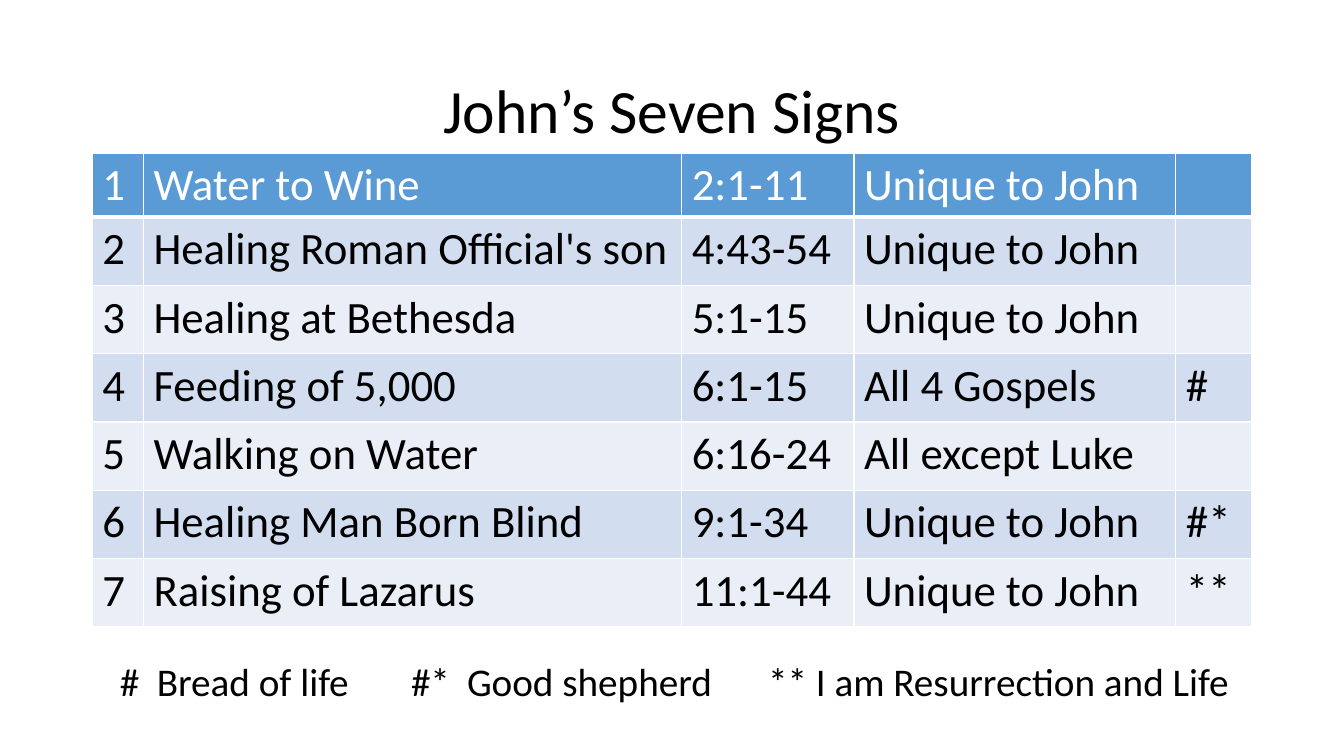
import pptx
import pptx.util
import pptx.dml.color
import pptx.enum.text
import pptx.oxml
import pptx.oxml.ns

Pt = pptx.util.Pt
NS = pptx.oxml.ns.nsdecls("a")


def color(code):
    return pptx.dml.color.RGBColor.from_string(code)


def style(par, size, code):
    """Set the font of a whole paragraph."""
    par.font.name = "Calibri"
    par.font.size = Pt(size)
    par.font.bold = False
    par.font.color.rgb = color(code)


deck = pptx.Presentation()
deck.slide_width, deck.slide_height = Pt(960), Pt(540)
slide = deck.slides.add_slide(deck.slide_layouts[6])

# Title
title = slide.shapes.add_textbox(Pt(66), Pt(28.8), Pt(828), Pt(104.4))
frame = title.text_frame
frame.word_wrap = True
frame.vertical_anchor = pptx.enum.text.MSO_ANCHOR.MIDDLE
par = frame.paragraphs[0]
par.text = "John’s Seven Signs"
par.alignment = pptx.enum.text.PP_ALIGN.CENTER
par.line_spacing = 0.9
style(par, 44, "000000")

# Table of signs
signs = [
    ("Water to Wine", "2:1-11", "Unique to John", ""),
    ("Healing Roman Official's son", "4:43-54", "Unique to John", ""),
    ("Healing at Bethesda", "5:1-15", "Unique to John", ""),
    ("Feeding of 5,000", "6:1-15", "All 4 Gospels", "#"),
    ("Walking on Water", "6:16-24", "All except Luke", ""),
    ("Healing Man Born Blind", "9:1-34", "Unique to John", "#*"),
    ("Raising of Lazarus", "11:1-44", "Unique to John", "**"),
]
widths = [36.5, 384.5, 123, 230, 54]
heights = [33] + [48.8] * 6
table = slide.shapes.add_table(len(signs), len(widths), Pt(66), Pt(109.4),
                               Pt(sum(widths)), Pt(sum(heights))).table
for col, width in zip(table.columns, widths):
    col.width = Pt(width)
for row, height in zip(table.rows, heights):
    row.height = Pt(height)

for i, sign in enumerate(signs):
    head = i == 0
    fill = "5B9BD5" if head else ("EAEFF7", "D2DEEF")[i % 2]
    for j, text in enumerate((str(i + 1), *sign)):
        cell = table.cell(i, j)
        par = cell.text_frame.paragraphs[0]
        par.text = text
        style(par, 32, "FFFFFF" if head else "000000")
        cell.fill.solid()
        cell.fill.fore_color.rgb = color(fill)
        # Borders come before the fill in the cell properties
        props = cell._tc.get_or_add_tcPr()
        for k, side in enumerate("LRTB"):
            thick = (head and side == "B") or (i == 1 and side == "T")
            props.insert(k, pptx.oxml.parse_xml(
                f'<a:ln{side} {NS} w="{Pt(3 if thick else 1)}"><a:solidFill>'
                f'<a:srgbClr val="FFFFFF"/></a:solidFill></a:ln{side}>'))

# Key to the marks, spaced by tab stops
key = slide.shapes.add_textbox(Pt(78.5), Pt(465.8), Pt(815), Pt(41))
key.text_frame.word_wrap = True
par = key.text_frame.paragraphs[0]
par.text = "#\tBread of life\t#*\tGood shepherd\t** I am Resurrection and Life"
style(par, 28, "000000")
stops = "".join(f'<a:tab pos="{Pt(stop)}" algn="l"/>'
                for stop in (26.4, 208, 248, 463))
par._p.get_or_add_pPr().insert(
    0, pptx.oxml.parse_xml(f"<a:tabLst {NS}>{stops}</a:tabLst>"))

deck.save("out.pptx")
